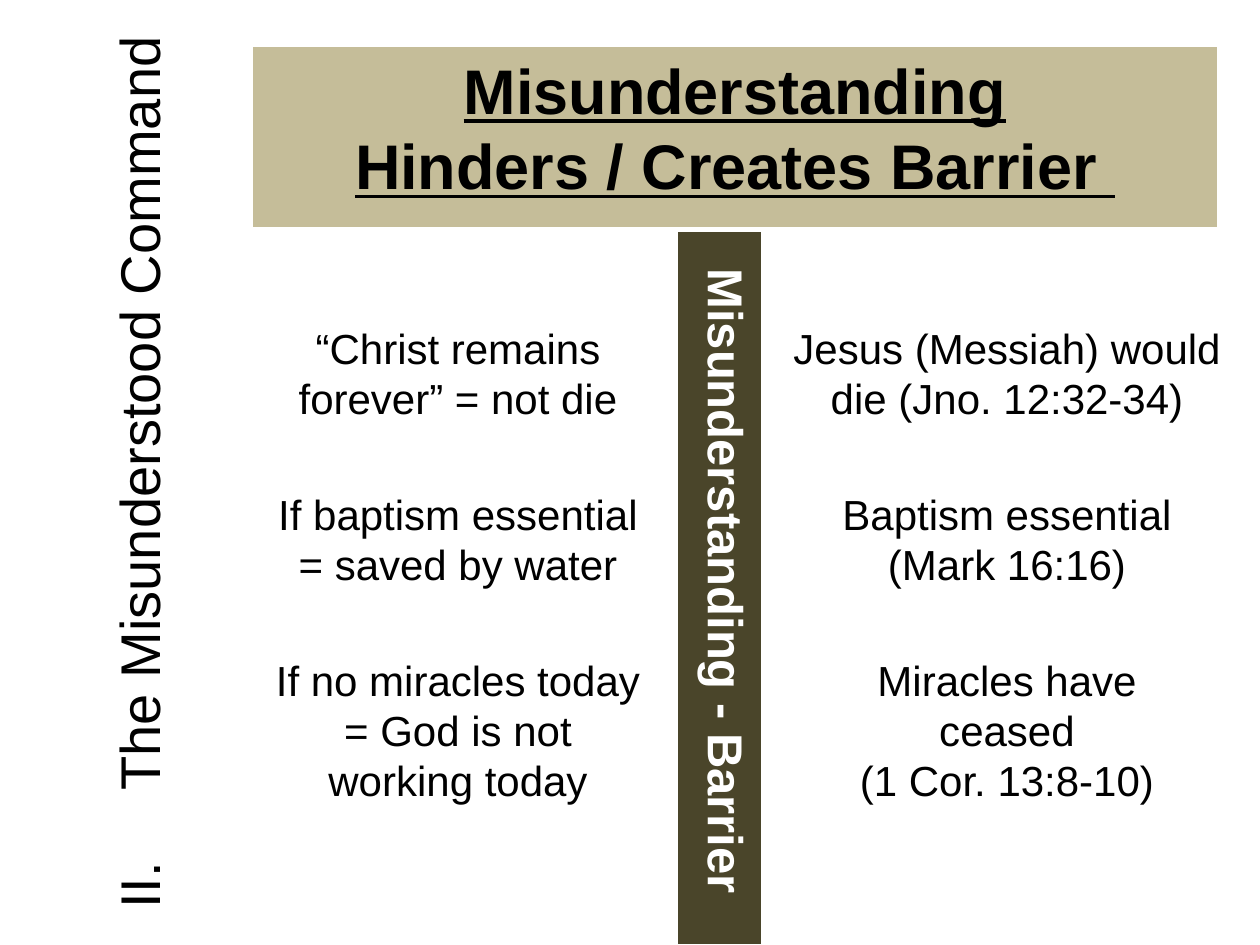
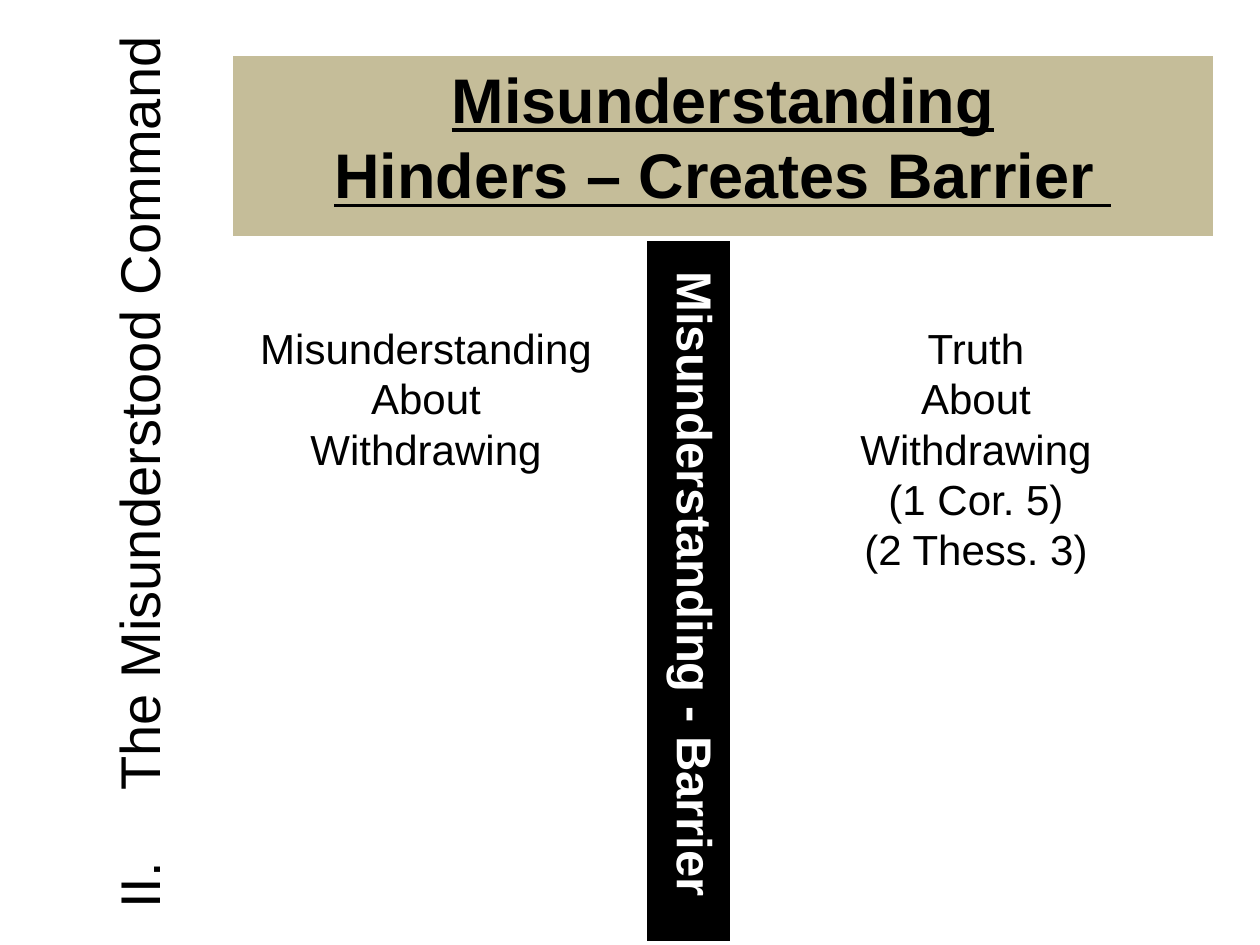
from dataclasses import dataclass

from lxml import etree
from pptx import Presentation
from pptx.dml.color import RGBColor
from pptx.enum.shapes import MSO_SHAPE
from pptx.enum.text import MSO_ANCHOR, PP_ALIGN
from pptx.oxml.ns import qn
from pptx.util import Emu, Pt

RECTANGLE = MSO_SHAPE.RECTANGLE
TOP = MSO_ANCHOR.TOP
CENTER = PP_ALIGN.CENTER

# Content: statements are lists of paragraphs; boxes are left, top, width, height in px
SECTION = "The Misunderstood Command"
SECTION_NUMBER = 2
BARRIER = "Misunderstanding - Barrier "

SLIDES = [
    {
        "title": ["Misunderstanding", "Hinders / Creates Barrier "],
        "title_box": (251, 45, 968, 184),
        "barrier_box": (676, 230, 87, 716),
        "barrier_color": "4A452A",
        "column_centers": (458, 1007),
        "rows": [
            # misunderstanding, truth, lines in the taller one, width of the truth
            (["“Christ remains forever” = not die"],
             ["Jesus (Messiah) would", "die (Jno. 12:32-34)"], 2, 462),
            (["If baptism essential = saved by water"],
             ["Baptism essential", "(Mark 16:16)"], 2, 390),
            (["If no miracles today = God is not working today"],
             ["Miracles have ceased", "(1 Cor. 13:8-10)"], 3, 390),
        ],
    },
    {
        "title": ["Misunderstanding", "Hinders – Creates Barrier "],
        "title_box": (231, 54, 984, 184),
        "barrier_box": (645, 239, 87, 704),
        "barrier_color": "000000",
        "column_centers": (426, 976),
        "rows": [
            (["Misunderstanding", "About", "Withdrawing"],
             ["Truth", "About", "Withdrawing", "(1 Cor. 5)", "(2 Thess. 3)"], 5, 462),
        ],
    },
]


@dataclass(frozen=True)
class Theme:
    font: str = "Arial"
    ink: str = "000000"
    paper: str = "FFFFFF"
    band: str = "C5BD99"
    title_size: int = 36
    section_size: int = 32
    barrier_size: int = 28
    body_size: int = 24
    outline: float = 2.25


THEME = Theme()

# Layout in px
PX_PER_INCH = 126
SLIDE_SIZE = (1260, 945)
SECTION_BOX = (65, 0, 102, 945)
SECTION_INDENT = 118
ROW_TOP, ROW_PITCH = 316, 166
LINE_HEIGHT, BOX_PADDING = 51, 13
STATEMENT_WIDTH = 390


def px(length):
    return Emu(round(length * 914400 / PX_PER_INCH))


def rgb(color):
    return RGBColor.from_string(color)


def turned(box):
    """Give the unrotated box that covers this box after a quarter turn."""
    left, top, width, height = box
    shift = (width - height) / 2
    return left + shift, top - shift, height, width


def write(shape, lines, size, color=THEME.ink, bold=False, underline=False):
    frame = shape.text_frame
    frame.word_wrap = True
    frame.vertical_anchor = TOP
    frame.text = "\n".join(lines)
    for paragraph in frame.paragraphs:
        paragraph.alignment = CENTER
        for run in paragraph.runs:
            font = run.font
            font.name, font.size = THEME.font, Pt(size)
            font.bold, font.underline = bold, underline
            font.color.rgb = rgb(color)


def add_text(slide, box, lines, size):
    text = slide.shapes.add_textbox(*map(px, box))
    write(text, lines, size)
    return text


def add_band(slide, box, fill):
    band = slide.shapes.add_shape(RECTANGLE, *map(px, box))
    band.shadow.inherit = False
    band.fill.solid()
    band.fill.fore_color.rgb = rgb(fill)
    band.line.color.rgb = rgb(THEME.paper)
    band.line.width = Pt(THEME.outline)
    return band


def add_section(slide):
    section = add_text(slide, turned(SECTION_BOX), [SECTION], THEME.section_size)
    section.rotation = 270
    heading = section.text_frame.paragraphs[0]
    heading.line_spacing = 1.5
    # Roman numeral with a hanging indent
    properties = heading._p.get_or_add_pPr()
    properties.set("marL", str(px(SECTION_INDENT)))
    properties.set("indent", str(px(-SECTION_INDENT)))
    etree.SubElement(properties, qn("a:buFont"), typeface="+mj-lt")
    etree.SubElement(properties, qn("a:buAutoNum"), type="romanUcPeriod",
                     startAt=str(SECTION_NUMBER))


def add_statements(slide, rows, centers):
    for index, (misunderstanding, truth, line_count, truth_width) in enumerate(rows):
        top = ROW_TOP + index * ROW_PITCH
        height = BOX_PADDING + line_count * LINE_HEIGHT
        widths = (STATEMENT_WIDTH, truth_width)
        for center, width, lines in zip(centers, widths, (misunderstanding, truth)):
            add_text(slide, (center - width / 2, top, width, height), lines,
                     THEME.body_size)


def build_slide(deck, content):
    slide = deck.slides.add_slide(deck.slide_layouts[6])
    add_section(slide)

    # Barrier between the two columns
    barrier = add_band(slide, turned(content["barrier_box"]), content["barrier_color"])
    barrier.rotation = 90
    write(barrier, [BARRIER], THEME.barrier_size, THEME.paper, bold=True)

    # Title band
    title = add_band(slide, content["title_box"], THEME.band)
    write(title, content["title"], THEME.title_size, bold=True, underline=True)

    add_statements(slide, content["rows"], content["column_centers"])


def main():
    deck = Presentation()
    deck.slide_width, deck.slide_height = map(px, SLIDE_SIZE)
    for content in SLIDES:
        build_slide(deck, content)
    deck.save("out.pptx")


if __name__ == "__main__":
    main()
